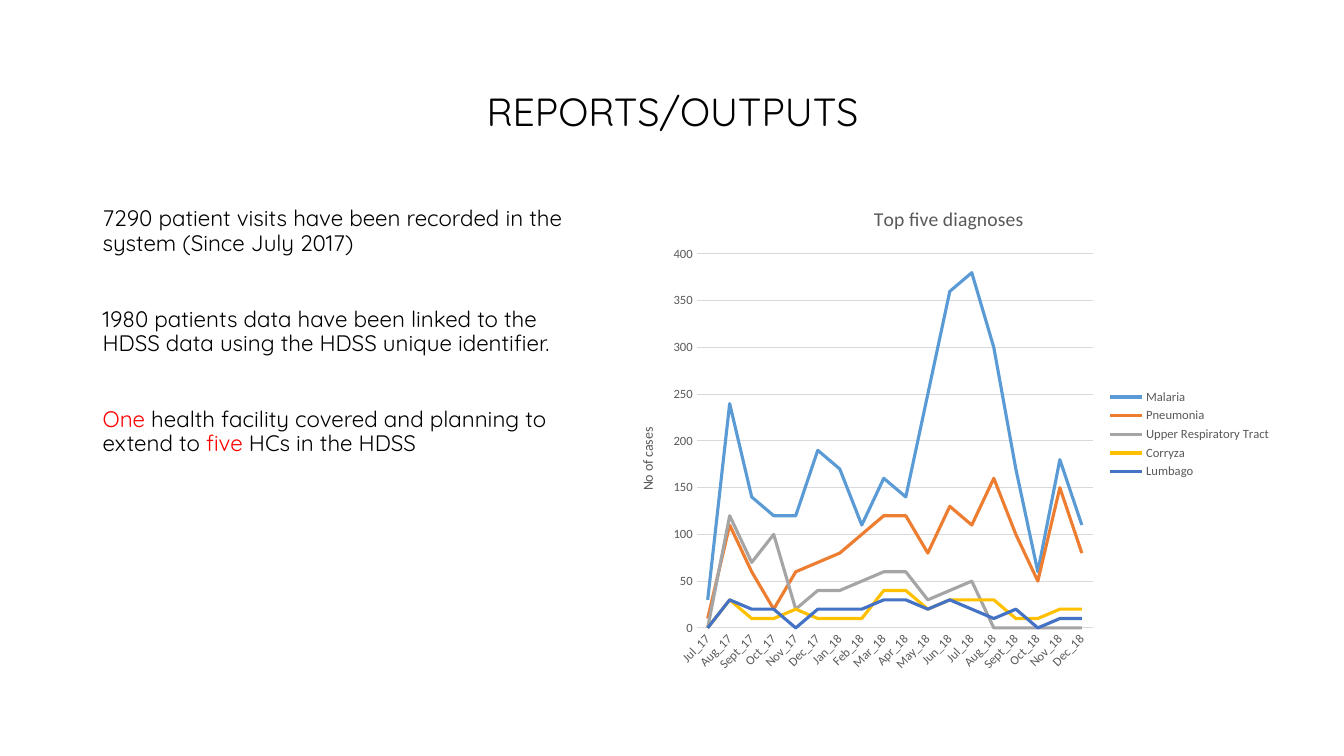
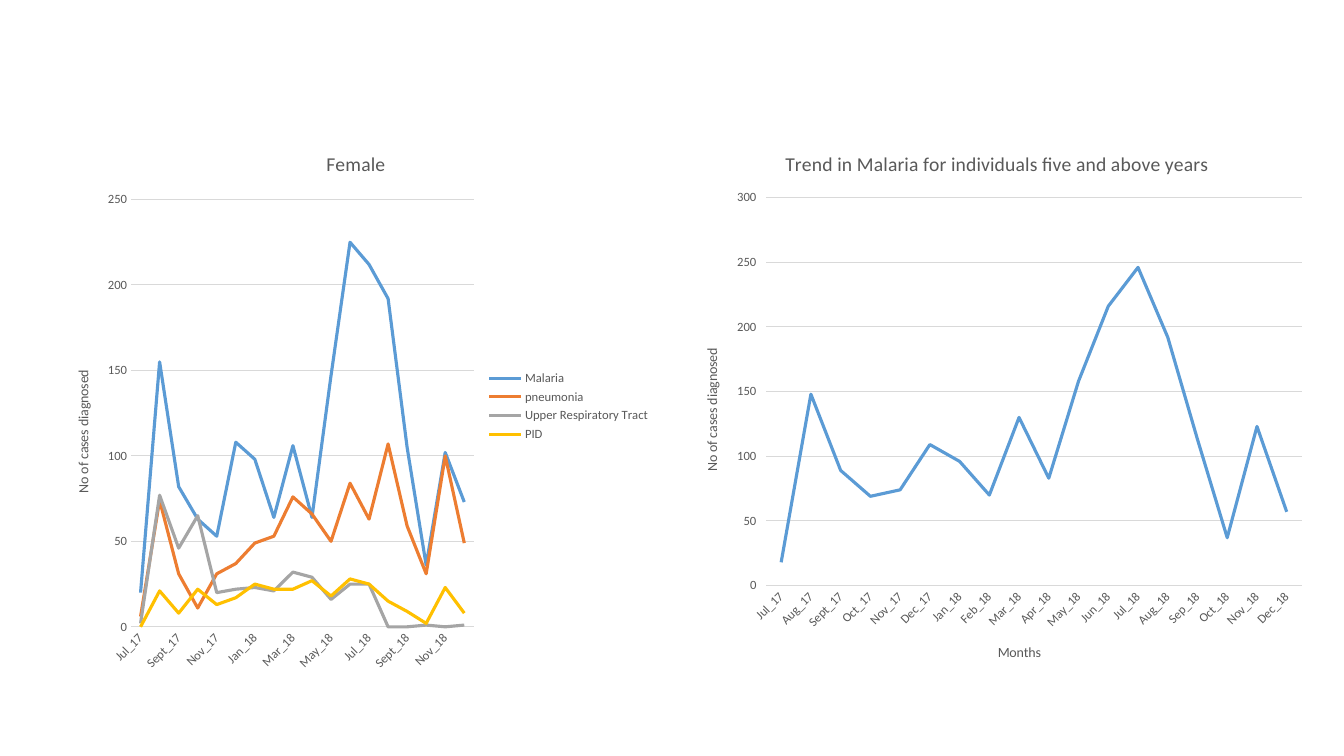
from dataclasses import dataclass

from pptx import Presentation
from pptx.chart.data import CategoryChartData
from pptx.dml.color import RGBColor
from pptx.enum.chart import XL_CHART_TYPE as ChartType
from pptx.enum.chart import XL_LEGEND_POSITION as LegendPosition
from pptx.enum.chart import XL_TICK_MARK as TickMark
from pptx.enum.text import MSO_ANCHOR as Anchor
from pptx.enum.text import PP_ALIGN as Align
from pptx.oxml import parse_xml
from pptx.oxml.ns import nsdecls
from pptx.util import Inches, Pt


@dataclass(frozen=True)
class Theme:
    ink: str = "000000"
    accent: str = "FF0000"
    muted: str = "595959"
    grid: str = "D9D9D9"
    series: tuple = ("5B9BD5", "ED7D31", "A5A5A5", "FFC000", "4472C4")
    text_font: str = "Quicksand"
    chart_font: str = "Calibri"
    title_size: int = 28
    body_size: int = 16
    chart_title_size: int = 14
    axis_title_size: int = 10
    label_size: int = 9
    trend_width: float = 2.25
    hairline: float = 0.75
    line_spacing: float = 0.9
    paragraph_gap: int = 37


THEME = Theme()
SLIDE_SIZE = (13.33, 7.5)
TITLE_ONLY, BLANK = 5, 6
AUTO_ROTATION, UPWARD = "-60000000", "-5400000"

MONTHS = ("Jul_17 Aug_17 Sept_17 Oct_17 Nov_17 Dec_17 Jan_18 Feb_18 Mar_18 "
          "Apr_18 May_18 Jun_18 Jul_18 Aug_18 Sept_18 Oct_18 Nov_18 Dec_18").split()
TREND_MONTHS = [month.replace("Sept_18", "Sep_18") for month in MONTHS]

FINDINGS = [
    [("7290 patient visits have been recorded in the system (Since July 2017)", THEME.ink)],
    [("1980 patients data have been linked to the HDSS data using the HDSS unique "
      "identifier.", THEME.ink)],
    [("One", THEME.accent),
     (" health facility covered and planning to extend to ", THEME.ink),
     ("five", THEME.accent),
     (" HCs in the HDSS", THEME.ink)],
]

# Each plot box is in inches from the top left of its chart.
TOP_FIVE = {
    "title": "Top five diagnoses",
    "value_title": "No of cases",
    "months": MONTHS,
    "maximum": 400,
    "plot": (0.8, 0.67, 3.93, 3.71),
    "series": {
        "Malaria": (30, 240, 140, 120, 120, 190, 170, 110, 160,
                    140, 250, 360, 380, 300, 170, 60, 180, 110),
        "Pneumonia": (10, 110, 60, 20, 60, 70, 80, 100, 120,
                      120, 80, 130, 110, 160, 100, 50, 150, 80),
        "Upper Respiratory Tract": (0, 120, 70, 100, 20, 40, 40, 50, 60,
                                    60, 30, 40, 50, 0, 0, 0, 0, 0),
        "Corryza": (0, 30, 10, 10, 20, 10, 10, 10, 40,
                    40, 20, 30, 30, 30, 10, 10, 20, 20),
        "Lumbago": (0, 30, 20, 20, 0, 20, 20, 20, 30,
                    30, 20, 30, 20, 10, 20, 0, 10, 10),
    },
}
FEMALE = {
    "title": "Female",
    "value_title": "No of cases diagnosed",
    "months": MONTHS,
    "maximum": 250,
    "plot": (0.79, 0.69, 3.4, 4.24),
    "series": {
        "Malaria": (20, 155, 82, 63, 53, 108, 98, 64, 106,
                    64, 147, 225, 212, 192, 105, 36, 102, 73),
        "pneumonia": (6, 74, 31, 11, 31, 37, 49, 53, 76,
                      66, 50, 84, 63, 107, 59, 31, 100, 49),
        "Upper Respiratory Tract": (2, 77, 46, 65, 20, 22, 23, 21, 32,
                                    29, 16, 25, 25, 0, 0, 1, 0, 1),
        "PID": (0, 21, 8, 22, 13, 17, 25, 22, 22,
                27, 18, 28, 25, 15, 9, 2, 23, 8),
    },
}
MALARIA_TREND = {
    "title": "Trend in Malaria for individuals five and above years",
    "value_title": "No of cases diagnosed",
    "month_title": "Months",
    "months": TREND_MONTHS,
    "maximum": 300,
    "plot": (0.85, 0.67, 5.31, 3.85),
    "value_tick": TickMark.OUTSIDE,
    "series": {
        "Series 1": (18, 148, 89, 69, 74, 109, 96, 70, 130,
                     83, 158, 216, 246, 192, 113, 37, 123, 57),
    },
}


def set_values(target, values):
    for name, value in values.items():
        setattr(target, name, value)


def style_font(font, name, size, color):
    set_values(font, {"name": name, "size": Pt(size), "bold": False})
    font.color.rgb = RGBColor.from_string(color)


def style_line(line, color, width):
    line.color.rgb = RGBColor.from_string(color)
    line.width = Pt(width)


def add_title(slide, text, box):
    title = slide.shapes.title
    set_values(title, dict(zip(("left", "top", "width", "height"), map(Inches, box))))
    frame = title.text_frame
    set_values(frame, {"text": text, "vertical_anchor": Anchor.MIDDLE})
    heading = frame.paragraphs[0]
    set_values(heading, {"alignment": Align.CENTER, "line_spacing": THEME.line_spacing})
    style_font(heading.runs[0].font, THEME.text_font, THEME.title_size, THEME.ink)


def add_findings(slide, findings, box):
    frame = slide.shapes.add_textbox(*map(Inches, box)).text_frame
    frame.word_wrap = True
    for index, pieces in enumerate(findings):
        finding = frame.add_paragraph() if index else frame.paragraphs[0]
        set_values(finding, {"line_spacing": THEME.line_spacing,
                             "space_before": Pt(THEME.paragraph_gap if index else 0)})
        for text, color in pieces:
            run = finding.add_run()
            run.text = text
            style_font(run.font, THEME.text_font, THEME.body_size, color)


def write_chart_title(frame, text, size):
    frame.text = text
    style_font(frame.paragraphs[0].runs[0].font, THEME.chart_font, size, THEME.muted)


def place_plot(chart, plot, chart_size):
    """Fix the inner plot area, given in inches within the chart."""
    shares = [length / chart_size[index % 2] for index, length in enumerate(plot)]
    places = "".join(f'<c:{tag} val="{share:.4f}"/>' for tag, share in zip("xywh", shares))
    layout = parse_xml(
        f'<c:layout {nsdecls("c")}><c:manualLayout><c:layoutTarget val="inner"/>'
        f'<c:xMode val="edge"/><c:yMode val="edge"/>{places}</c:manualLayout></c:layout>')
    plot_area = chart.element.xpath("./c:chart/c:plotArea")[0]
    for previous in plot_area.xpath("./c:layout"):
        plot_area.remove(previous)
    plot_area.insert(0, layout)


def rotate_text(chart, place, angle):
    for body in chart.element.xpath(f".//{place}//a:bodyPr"):
        body.set("rot", angle)
        body.set("vert", "horz")


def style_axes(chart, content):
    months, cases = chart.category_axis, chart.value_axis
    set_values(months, {"major_tick_mark": TickMark.NONE,
                        "minor_tick_mark": TickMark.NONE})
    set_values(cases, {"major_tick_mark": content.get("value_tick", TickMark.NONE),
                       "minor_tick_mark": TickMark.NONE,
                       "minimum_scale": 0, "maximum_scale": content["maximum"],
                       "major_unit": 50, "has_major_gridlines": True})
    style_line(months.format.line, THEME.grid, THEME.hairline)
    style_line(cases.major_gridlines.format.line, THEME.grid, THEME.hairline)
    cases.format.line.fill.background()
    for axis, key in ((months, "month_title"), (cases, "value_title")):
        style_font(axis.tick_labels.font, THEME.chart_font, THEME.label_size, THEME.muted)
        axis.has_title = key in content
        if axis.has_title:
            write_chart_title(axis.axis_title.text_frame, content[key],
                              THEME.axis_title_size)
    rotate_text(chart, "c:catAx/c:txPr", AUTO_ROTATION)
    rotate_text(chart, "c:valAx/c:title", UPWARD)


def add_line_chart(slide, content, box):
    data = CategoryChartData()
    data.categories = content["months"]
    for diagnosis, counts in content["series"].items():
        data.add_series(diagnosis, counts)
    chart = slide.shapes.add_chart(ChartType.LINE, *map(Inches, box), data).chart
    style_font(chart.font, THEME.chart_font, THEME.axis_title_size, THEME.ink)
    set_values(chart, {"has_title": True, "has_legend": len(content["series"]) > 1})
    write_chart_title(chart.chart_title.text_frame, content["title"],
                      THEME.chart_title_size)
    if chart.has_legend:
        set_values(chart.legend, {"position": LegendPosition.RIGHT,
                                  "include_in_layout": False})
        style_font(chart.legend.font, THEME.chart_font, THEME.label_size, THEME.muted)
    chart.plots[0].vary_by_categories = False
    for diagnosis, color in zip(chart.plots[0].series, THEME.series):
        diagnosis.smooth = False
        style_line(diagnosis.format.line, color, THEME.trend_width)
    style_axes(chart, content)
    place_plot(chart, content["plot"], box[2:])


def add_reports_slide(deck):
    slide = deck.slides.add_slide(deck.slide_layouts[TITLE_ONLY])
    add_title(slide, "REPORTS/OUTPUTS", (0.92, 0.4, 11.5, 1.45))
    add_findings(slide, FINDINGS, (0.92, 2.01, 4.97, 4.75))
    add_line_chart(slide, TOP_FIVE, (6.11, 1.85, 6.6, 4.92))


def add_trends_slide(deck):
    slide = deck.slides.add_slide(deck.slide_layouts[BLANK])
    top, height = 1.29, 5.48
    for content, left, width in ((FEMALE, 0.51, 6.04), (MALARIA_TREND, 6.75, 6.28)):
        add_line_chart(slide, content, (left, top, width, height))


def main():
    deck = Presentation()
    set_values(deck, dict(zip(("slide_width", "slide_height"), map(Inches, SLIDE_SIZE))))
    add_reports_slide(deck)
    add_trends_slide(deck)
    deck.save("out.pptx")


if __name__ == "__main__":
    main()
